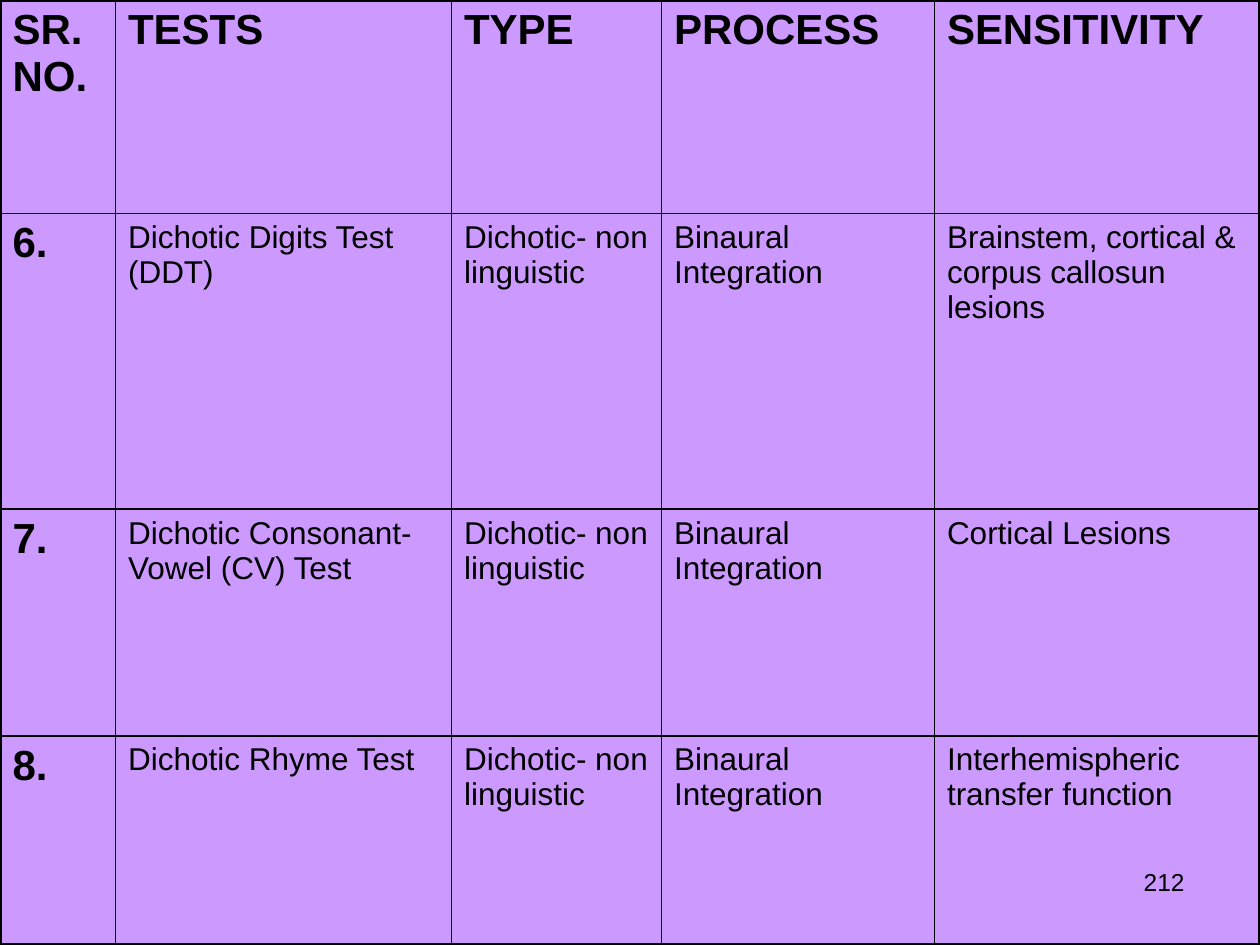
"""Build a slide with a table of dichotic listening tests."""
from lxml.etree import SubElement
from pptx import Presentation
from pptx.dml.color import RGBColor
from pptx.enum.text import PP_ALIGN
from pptx.oxml.ns import qn
from pptx.util import Pt

ROWS = [
    ("SR. NO.", "TESTS", "TYPE", "PROCESS", "SENSITIVITY"),
    ("6.", "Dichotic Digits Test (DDT)", "Dichotic- non linguistic",
     "Binaural Integration", "Brainstem, cortical & corpus callosun lesions"),
    ("7.", "Dichotic Consonant-Vowel (CV) Test", "Dichotic- non linguistic",
     "Binaural Integration", "Cortical Lesions"),
    ("8.", "Dichotic Rhyme Test", "Dichotic- non linguistic",
     "Binaural Integration", "Interhemispheric transfer function"),
]
COLUMN_WIDTHS = (66, 192, 120, 156, 186)
ROW_HEIGHTS = (122, 169, 129.5, 119.5)
PAGE_NUMBER = "212"
BLACK, LILAC = "000000", "CC99FF"
OUTER_LINE, INNER_LINE = 2.25, 1
HEADING = {"name": "Arial", "size": Pt(24), "bold": True}
BODY = {"name": "Arial", "size": Pt(18), "bold": False}
NUMBER = {"name": "Arial", "size": Pt(14)}


def color(value):
    return RGBColor.from_string(value)


def write(frame, text, style):
    para = frame.paragraphs[0]
    span = para.add_run()
    span.text = text
    for name, value in style.items():
        setattr(span.font, name, value)
    span.font.color.rgb = color(BLACK)
    return para


def add_borders(cell, outer_sides):
    properties = cell._tc.get_or_add_tcPr()
    for side, outer in outer_sides.items():
        width = Pt(OUTER_LINE if outer else INNER_LINE)
        line = SubElement(properties, qn(f"a:ln{side}"), w=str(width))
        fill = SubElement(line, qn("a:solidFill"))
        SubElement(fill, qn("a:srgbClr"), val=BLACK)


def add_test_table(page):
    row_count, column_count = len(ROWS), len(COLUMN_WIDTHS)
    table = page.shapes.add_table(row_count, column_count, Pt(0), Pt(0),
                                  Pt(sum(COLUMN_WIDTHS)), Pt(sum(ROW_HEIGHTS))).table
    table.first_row = table.horz_banding = False
    for column, width in zip(table.columns, COLUMN_WIDTHS):
        column.width = Pt(width)
    for row, height in zip(table.rows, ROW_HEIGHTS):
        row.height = Pt(height)
    for i, texts in enumerate(ROWS):
        for j, text in enumerate(texts):
            cell = table.cell(i, j)
            write(cell.text_frame, text, HEADING if i == 0 or j == 0 else BODY)
            add_borders(cell, {"L": j == 0, "R": j == column_count - 1,
                               "T": i == 0, "B": i == row_count - 1})
            cell.fill.background()


def add_page_number(page):
    box = page.shapes.add_textbox(Pt(516), Pt(492), Pt(168), Pt(37.5))
    box.text_frame.word_wrap = True
    write(box.text_frame, PAGE_NUMBER, NUMBER).alignment = PP_ALIGN.RIGHT


def main():
    deck = Presentation()
    deck.slide_width, deck.slide_height = Pt(720), Pt(540)
    page = deck.slides.add_slide(deck.slide_layouts[6])
    page.background.fill.solid()
    page.background.fill.fore_color.rgb = color(LILAC)
    add_test_table(page)
    add_page_number(page)
    deck.save("out.pptx")


if __name__ == "__main__":
    main()
